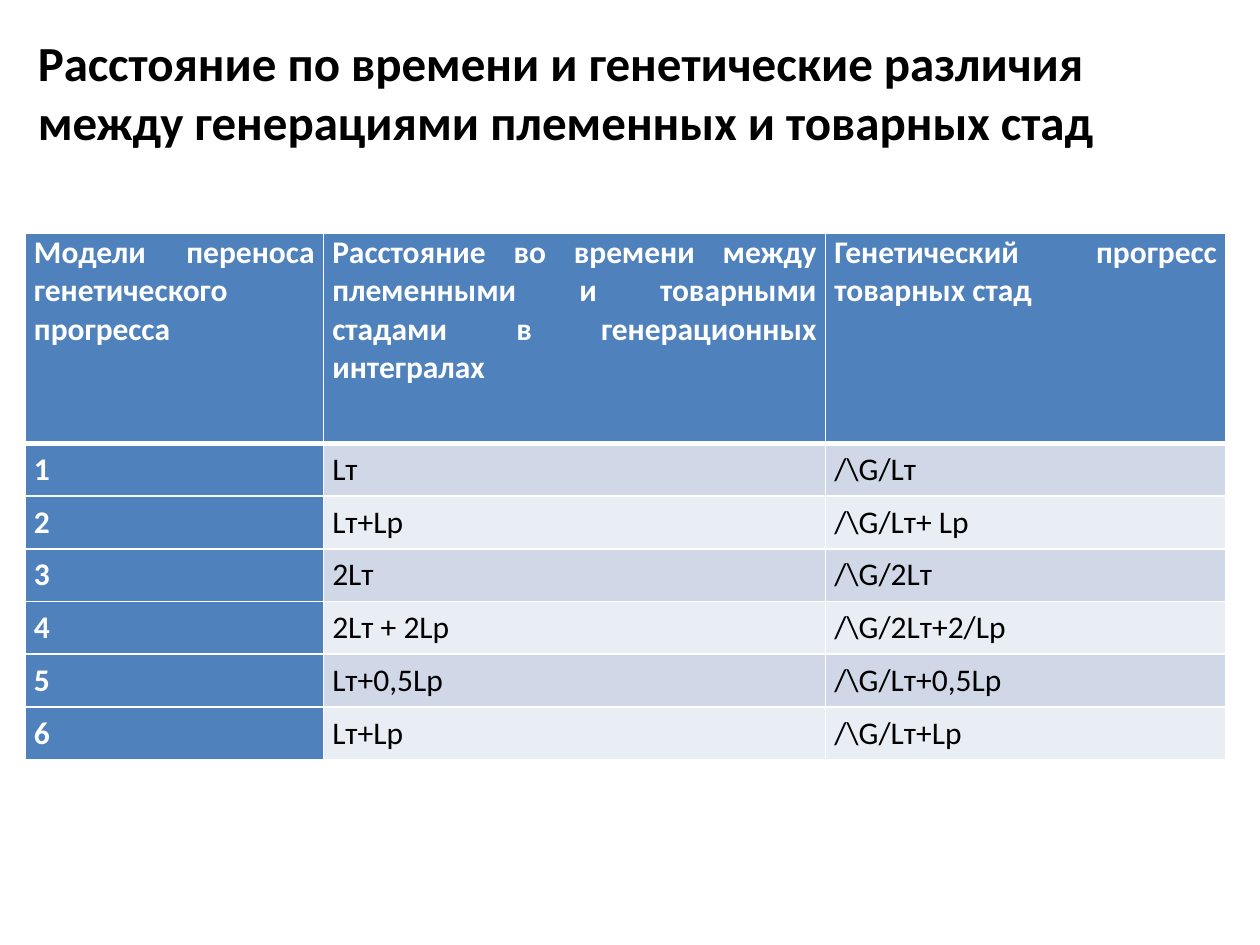
from dataclasses import dataclass

from lxml import etree
from pptx import Presentation
from pptx.dml.color import RGBColor
from pptx.enum import text
from pptx.oxml import ns
from pptx.util import Inches, Pt


@dataclass(frozen=True)
class Theme:
    font: str = "Calibri"
    title_size: int = 28
    table_size: int = 18
    ink: str = "000000"
    paper: str = "FFFFFF"
    accent: str = "4F81BD"
    bands: tuple = ("D0D8E8", "E9EDF4")
    grid_width: int = 1
    header_rule_width: int = 3


THEME = Theme()
TITLE = "Расстояние по времени и генетические различия между генерациями племенных и товарных стад"
HEADINGS = (
    "Модели переноса генетического прогресса",
    "Расстояние во времени между племенными и товарными стадами в генерационных интегралах",
    "Генетический прогресс товарных стад",
)
MODELS = (
    ("Lт", "/\\G/Lт"),
    ("Lт+Lр", "/\\G/Lт+ Lp"),
    ("2Lт", "/\\G/2Lт"),
    ("2Lт + 2Lр", "/\\G/2Lт+2/Lр"),
    ("Lт+0,5Lр", "/\\G/Lт+0,5Lр"),
    ("Lт+Lр", "/\\G/Lт+Lр"),
)
COLUMN_WIDTHS = (2.37, 3.99, 3.18)
HEADER_HEIGHT = 1.67


def write_text(frame, wording, *, size, color, bold=False, align=text.PP_ALIGN.LEFT):
    frame.word_wrap = True
    paragraph = frame.paragraphs[0]
    paragraph.alignment = align
    run = paragraph.add_run()
    run.text = wording
    run.font.name = THEME.font
    run.font.size = Pt(size)
    run.font.bold = bold
    run.font.color.rgb = RGBColor.from_string(color)


def set_borders(cell, widths):
    properties = cell._tc.get_or_add_tcPr()
    for position, (side, width) in enumerate(widths.items()):
        line = etree.Element(ns.qn(f"a:ln{side}"), w=str(Pt(width)))
        fill = etree.SubElement(line, ns.qn("a:solidFill"))
        etree.SubElement(fill, ns.qn("a:srgbClr"), val=THEME.paper)
        properties.insert(position, line)


def place_title(slide, left, top, width, height):
    title = slide.shapes.title
    title.left, title.top, title.width, title.height = left, top, width, height
    frame = title.text_frame
    frame.auto_size = text.MSO_AUTO_SIZE.NONE
    frame.vertical_anchor = text.MSO_ANCHOR.TOP
    write_text(frame, TITLE, size=THEME.title_size, color=THEME.ink, bold=True)


def format_cell(cell, wording, row, column):
    is_header = row == 0
    is_label = is_header or column == 0
    cell.margin_left = cell.margin_right = Inches(0.07)
    cell.margin_top = cell.margin_bottom = 0
    cell.vertical_anchor = text.MSO_ANCHOR.TOP if is_header else text.MSO_ANCHOR.MIDDLE
    cell.fill.solid()
    fill = THEME.accent if is_label else THEME.bands[(row - 1) % 2]
    cell.fill.fore_color.rgb = RGBColor.from_string(fill)
    write_text(
        cell.text_frame,
        wording,
        size=THEME.table_size,
        color=THEME.paper if is_label else THEME.ink,
        bold=is_label,
        align=text.PP_ALIGN.JUSTIFY,
    )
    widths = dict.fromkeys("LRTB", THEME.grid_width)
    if is_header:
        widths["B"] = THEME.header_rule_width
    elif row == 1:
        widths["T"] = THEME.header_rule_width
    set_borders(cell, widths)


def place_models_table(slide, left, top, width, height):
    rows = [HEADINGS] + [(str(n), *model) for n, model in enumerate(MODELS, 1)]
    table = slide.shapes.add_table(
        len(rows), len(HEADINGS), left, top, width, height
    ).table
    table.first_col = True
    for column, share in zip(table.columns, COLUMN_WIDTHS):
        column.width = int(width * share / sum(COLUMN_WIDTHS))
    header_height = Inches(HEADER_HEIGHT)
    model_height = (height - header_height) // len(MODELS)
    for r, wordings in enumerate(rows):
        table.rows[r].height = model_height if r else header_height
        for c, wording in enumerate(wordings):
            format_cell(table.cell(r, c), wording, r, c)


def main():
    deck = Presentation()
    deck.slide_width, deck.slide_height = Inches(10), Inches(7.5)
    slide = deck.slides.add_slide(deck.slide_layouts[5])
    place_title(slide, Inches(0.2), Inches(0.21), Inches(9.69), Inches(1.51))
    place_models_table(slide, Inches(0.2), Inches(1.85), Inches(9.53), Inches(4.18))
    deck.save("out.pptx")


if __name__ == "__main__":
    main()
